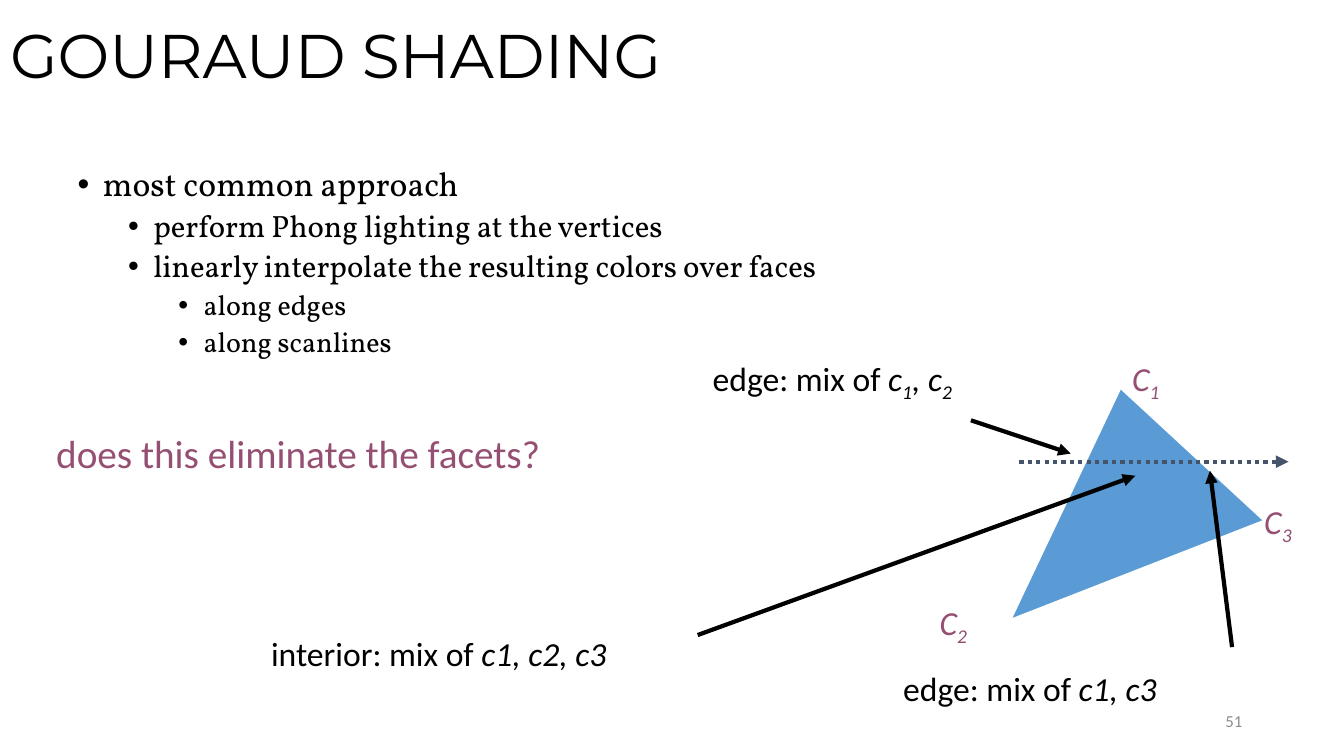
from dataclasses import dataclass

from lxml.etree import SubElement
from pptx import Presentation
from pptx.dml.color import RGBColor
from pptx.enum.dml import MSO_LINE_DASH_STYLE as Dash
from pptx.enum.shapes import MSO_CONNECTOR as ConnectorKind
from pptx.enum.text import MSO_ANCHOR as Anchor, MSO_AUTO_SIZE as AutoSize, PP_ALIGN as Align
from pptx.oxml.ns import qn
from pptx.util import Inches, Pt


@dataclass(frozen=True)
class Theme:
    black: str = "000000"
    white: str = "FFFFFF"
    plum: str = "954F72"
    blue: str = "5B9BD5"
    slate: str = "44546A"
    grey: str = "8C8C8C"
    title_font: str = "Montserrat"
    body_font: str = "Vollkorn"
    label_font: str = "Calibri"
    title_size: int = 44
    body_sizes: tuple = (24, 22, 20)
    label_size: int = 24
    question_size: int = 28
    number_size: int = 12
    line_width: int = 3


THEME = Theme()


@dataclass(frozen=True)
class Span:
    text: str
    italic: bool = False
    subscript: bool = False


@dataclass(frozen=True)
class Label:
    box: tuple
    spans: tuple
    color: str = THEME.black
    size: int = THEME.label_size
    wrap: bool = False
    align: Align = Align.LEFT
    anchor: Anchor = Anchor.TOP


@dataclass(frozen=True)
class Arrow:
    start: tuple
    end: tuple
    color: str = THEME.black
    dash: Dash = Dash.SOLID


def vertex(number: str, left: float, top: float) -> Label:
    spans = (Span("C", True), Span(number, True, True))
    return Label((left, top, 0.55, 0.5), spans, THEME.plum)


TITLE = "GOURAUD SHADING"
BULLETS = (
    (0, "most common approach"),
    (1, "perform Phong lighting at the vertices"),
    (1, "linearly interpolate the resulting colors over faces"),
    (2, "along edges"),
    (2, "along scanlines"),
)
TRIANGLE = ((10, 6.17), (11.11, 3.83), (12.56, 5.17))
LABELS = (
    Label((9.42, 6.95, 3, 0.4), (Span("51"),), THEME.grey, THEME.number_size,
          True, Align.RIGHT, Anchor.MIDDLE),
    vertex("1", 11.13, 3.5),
    vertex("2", 9.22, 5.92),
    vertex("3", 12.44, 4.92),
    Label((6.97, 3.5, 2.67, 0.5),
          (Span("edge: mix of"), Span(" c", True), Span("1", True, True),
           Span(", c", True), Span("2", True, True))),
    Label((8.86, 6.58, 2.81, 0.5), (Span("edge: mix of"), Span(" c1, c3", True))),
    Label((2.59, 6.23, 3.63, 0.5), (Span("interior: mix of"), Span(" c1, c2, c3", True))),
    Label((0.46, 4.21, 7.46, 0.77), (Span("does this eliminate the facets?"),),
          THEME.plum, THEME.question_size, True),
)
ARROWS = (
    Arrow((10.11, 4.58), (12.78, 4.58), THEME.slate, Dash.ROUND_DOT),
    Arrow((12.22, 6.42), (12, 4.67)),
    Arrow((6.92, 6.3), (11.26, 4.72)),
    Arrow((9.63, 4.17), (10.62, 4.5)),
)


def apply(target, values: dict) -> None:
    for name, value in values.items():
        setattr(target, name, value)


def place(shape, box: tuple) -> None:
    apply(shape, dict(zip(("left", "top", "width", "height"), map(Inches, box))))


def add_span(para, span: Span, font: str, size: int, color: str) -> None:
    run = para.add_run()
    run.text = span.text
    apply(run.font, {"name": font, "size": Pt(size), "italic": span.italic})
    run.font.color.rgb = RGBColor.from_string(color)
    if span.subscript:
        run.font._element.set("baseline", "-25000")


def set_bullet(para, level: int) -> None:
    properties = para._p.get_or_add_pPr()
    properties.set("marL", str(Inches(0.25 + 0.5 * level)))
    properties.set("indent", str(Inches(-0.25)))
    SubElement(properties, qn("a:buFont")).set("typeface", "Arial")
    SubElement(properties, qn("a:buChar")).set("char", "•")


def fill_title(title) -> None:
    place(title, (0, 0.17, 13.33, 0.83))
    apply(title.text_frame, {"vertical_anchor": Anchor.MIDDLE, "auto_size": AutoSize.NONE})
    para = title.text_frame.paragraphs[0]
    apply(para, {"alignment": Align.LEFT, "line_spacing": 0.9})
    add_span(para, Span(TITLE), THEME.title_font, THEME.title_size, THEME.black)


def fill_body(body) -> None:
    place(body, (0.67, 1.61, 12.67, 2.13))
    frame = body.text_frame
    frame.auto_size = AutoSize.NONE
    for index, (level, text) in enumerate(BULLETS):
        para = frame.add_paragraph() if index else frame.paragraphs[0]
        set_bullet(para, level)
        apply(para, {"level": level, "line_spacing": 0.9,
                     "space_before": Pt(5 if index else 0)})
        add_span(para, Span(text), THEME.body_font, THEME.body_sizes[level], THEME.black)


def add_triangle(page) -> None:
    points = [tuple(map(Inches, point)) for point in TRIANGLE]
    builder = page.shapes.build_freeform(*points[0])
    builder.add_line_segments(points[1:], close=True)
    triangle = builder.convert_to_shape()
    triangle.shadow.inherit = False
    triangle.fill.solid()
    triangle.fill.fore_color.rgb = RGBColor.from_string(THEME.blue)
    triangle.line.color.rgb = RGBColor.from_string(THEME.white)
    triangle.line.width = Pt(THEME.line_width)


def add_label(page, label: Label) -> None:
    frame = page.shapes.add_textbox(*map(Inches, label.box)).text_frame
    apply(frame, {"word_wrap": label.wrap, "vertical_anchor": label.anchor,
                  "auto_size": AutoSize.NONE if label.wrap else AutoSize.SHAPE_TO_FIT_TEXT})
    para = frame.paragraphs[0]
    para.alignment = label.align
    for span in label.spans:
        add_span(para, span, THEME.label_font, label.size, label.color)


def add_arrow(page, arrow: Arrow) -> None:
    connector = page.shapes.add_connector(
        ConnectorKind.STRAIGHT, *map(Inches, arrow.start + arrow.end))
    connector.line.color.rgb = RGBColor.from_string(arrow.color)
    apply(connector.line, {"width": Pt(THEME.line_width), "dash_style": arrow.dash})
    SubElement(connector.line._get_or_add_ln(), qn("a:tailEnd")).set("type", "triangle")
    SubElement(connector._element.spPr, qn("a:effectLst"))


def main() -> None:
    deck = Presentation()
    apply(deck, {"slide_width": Inches(13.33), "slide_height": Inches(7.5)})
    page = deck.slides.add_slide(deck.slide_layouts[1])
    fill_title(page.shapes.title)
    fill_body(page.placeholders[1])
    add_triangle(page)
    for label in LABELS:
        add_label(page, label)
    for arrow in ARROWS:
        add_arrow(page, arrow)
    deck.save("out.pptx")


if __name__ == "__main__":
    main()
